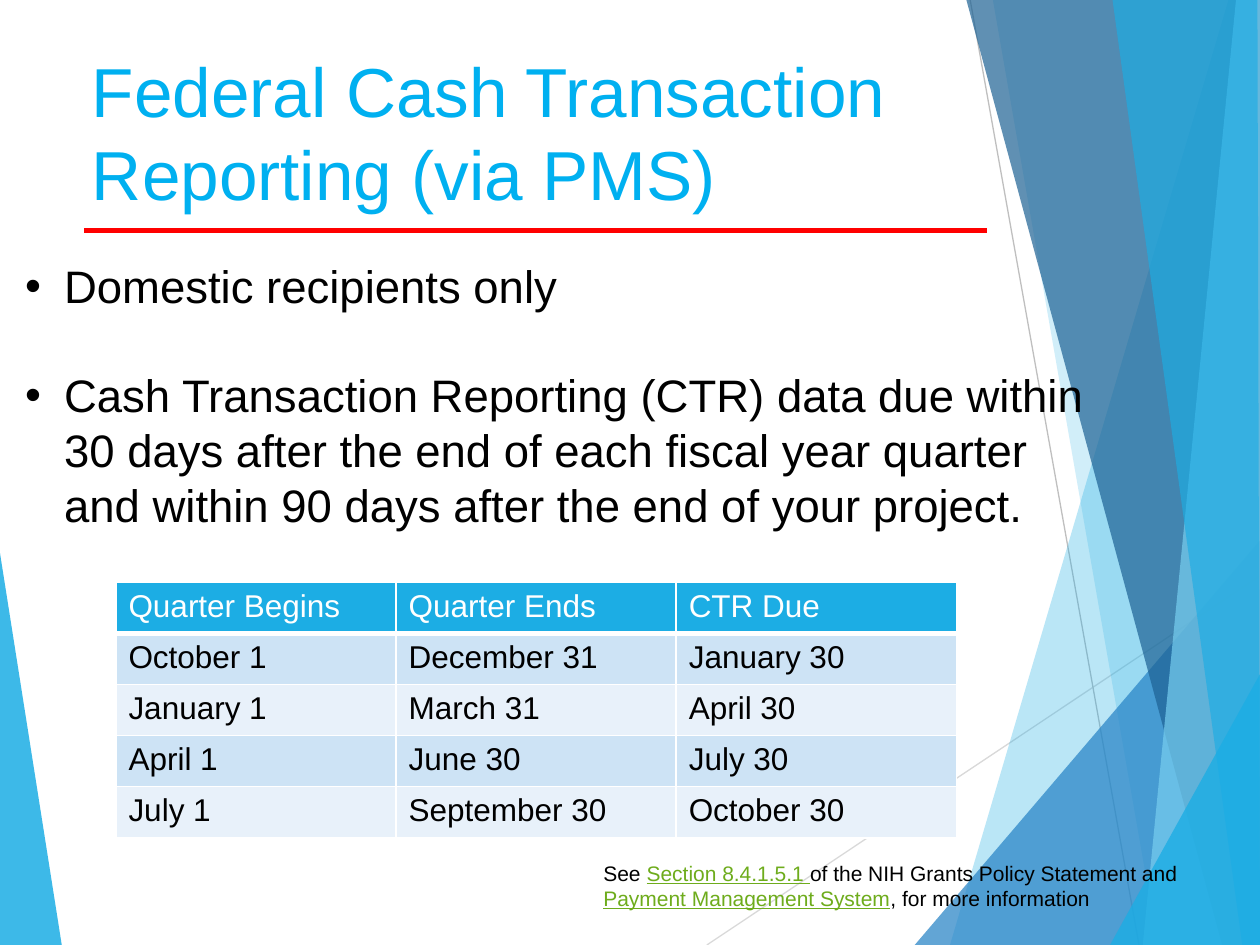
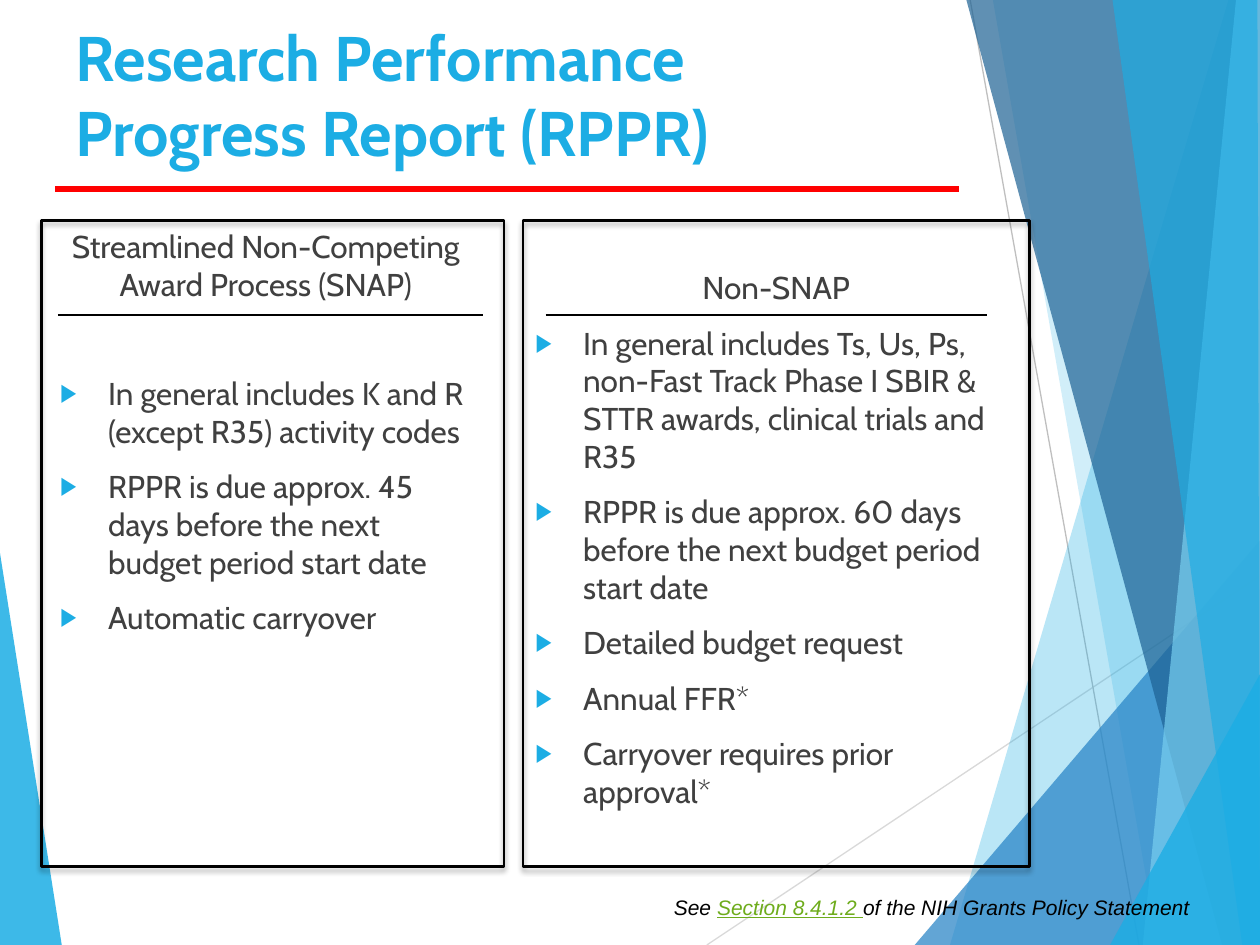
import pptx
import pptx.dml.color
import pptx.enum.dml
import pptx.enum.shapes
import pptx.enum.text
import pptx.oxml
import pptx.oxml.ns
import pptx.util
from lxml import etree

PX = 9144  # EMU in one px, 100 px to the inch
COLOURS = {
    "accent": "1CADE4", "bright": "00B0F0", "blue": "2683C6", "navy": "1D6294",
    "sky": "77CEEF", "rule": "FF0000", "link": "6EAC1C", "text": "000000",
    "body": "404040", "white": "FFFFFF", "band": "CDE3F5", "pale": "E8F1FA",
    "grey": "BFBFBF", "light grey": "D9D9D9",
}
ALIGN = pptx.enum.text.PP_ALIGN
ANCHOR = pptx.enum.text.MSO_ANCHOR
LEADING = 1.2  # line pitch of Arial text, as a share of its size

# Facets behind every slide: colour, opacity in percent, corners
LEFT_FACET = ("accent", 85, [(0, 439), (49, 750), (0, 750)])
RIGHT_FACETS = [
    ("accent", 30, [(975, 0), (754, 750), (1000, 750), (1000, 0)]),
    ("accent", 20, [(788, 0), (919, 750), (1000, 750), (1000, 0)]),
    ("blue", 72, [(726, 750), (1000, 429), (1000, 750)]),
    ("navy", 70, [(767, 0), (970, 750), (1000, 750), (1000, 0)]),
    ("sky", 70, [(981, 0), (907, 750), (1000, 750), (1000, 0)]),
    ("accent", 65, [(883, 0), (986, 750), (1000, 750), (998, 0)]),
    ("accent", 80, [(881, 750), (1000, 535), (1000, 750)]),
]


def px(*lengths):
    return [pptx.util.Emu(round(length * PX)) for length in lengths]


def rgb(colour):
    return pptx.dml.color.RGBColor.from_string(COLOURS[colour])


def apply(target, values):
    for attribute, value in values.items():
        setattr(target, attribute, value)


def add_xml(parent, tag, **attributes):
    return etree.SubElement(parent, pptx.oxml.ns.qn(tag),
                            {key: str(value) for key, value in attributes.items()})


class Deck:
    def __init__(self):
        self.presentation = pptx.Presentation()
        apply(self.presentation, dict(zip(("slide_width", "slide_height"), px(1000, 750))))
        self.slide = None

    def new_slide(self):
        layout = self.presentation.slide_layouts[5]
        self.slide = self.presentation.slides.add_slide(layout)
        self.facet(*LEFT_FACET)
        self.line((561, 750), (1000, 457), "light grey", 0.75)
        self.line((770, 0), (904, 750), "grey", 0.75)
        for facet in RIGHT_FACETS:
            self.facet(*facet)

    def facet(self, colour, opacity, corners):
        outline = self.slide.shapes.build_freeform(*corners[0], scale=float(PX))
        outline.add_line_segments(corners[1:], close=True)
        facet = outline.convert_to_shape()
        facet.shadow.inherit = False
        facet.fill.solid()
        facet.fill.fore_color.rgb = rgb(colour)
        facet.line.fill.background()
        fill = facet.fill._xPr.find(pptx.oxml.ns.qn("a:solidFill"))
        add_xml(fill[0], "a:alpha", val=opacity * 1000)

    def line(self, start, end, colour, width):
        line = self.slide.shapes.add_connector(
            pptx.enum.shapes.MSO_CONNECTOR.STRAIGHT, *px(*start, *end))
        line.line.color.rgb = rgb(colour)
        line.line.width = pptx.util.Pt(width)
        add_xml(line._element.spPr, "a:effectLst")

    def font(self, font, colour, size, **values):
        apply(font, {"size": pptx.util.Pt(size), **values})
        font.color.rgb = rgb(colour)

    def title(self, text, box, rule_start, rule_end, colour, size, leading=None, **font):
        title = self.slide.shapes.title
        apply(title, dict(zip(("left", "top", "width", "height"), px(*box))))
        frame = title.text_frame
        frame.text = text
        apply(frame, {"word_wrap": True, "vertical_anchor": ANCHOR.MIDDLE,
                      "auto_size": pptx.enum.text.MSO_AUTO_SIZE.NONE})
        heading = frame.paragraphs[0]
        heading.alignment = ALIGN.LEFT
        if leading:
            heading.line_spacing = pptx.util.Pt(size * leading)
        self.font(heading.runs[0].font, colour, size, **font)
        self.line(rule_start, rule_end, "rule", 3)

    def text_frame(self, box):
        frame = self.slide.shapes.add_textbox(*px(*box)).text_frame
        frame.word_wrap = True
        return frame

    def bullet(self, paragraph, mark, indent, colour=None, percent=100):
        properties = paragraph._p.get_or_add_pPr()
        margin = px(indent)[0]
        properties.set("marL", str(margin))
        properties.set("indent", str(-margin))
        if colour:
            add_xml(add_xml(properties, "a:buClr"), "a:srgbClr", val=COLOURS[colour])
        add_xml(properties, "a:buSzPct", val=percent * 1000)
        add_xml(properties, "a:buFont", typeface="Arial")
        add_xml(properties, "a:buChar", char=mark)

    def points(self, box, points):
        size = 26
        pitch = pptx.util.Pt(size * LEADING)
        frame = self.text_frame(box)
        for index, point in enumerate(points):
            paragraph = frame.paragraphs[0] if index == 0 else frame.add_paragraph()
            paragraph.line_spacing = pitch
            if index:
                paragraph.space_before = pitch
            self.bullet(paragraph, "•", 31)
            run = paragraph.add_run()
            run.text = point
            self.font(run.font, "text", size, name="Arial")

    def award_column(self, box, heading, points, gap=10):
        frame = self.text_frame(box)
        for index, text in enumerate([heading, *points]):
            paragraph = frame.paragraphs[0] if index == 0 else frame.add_paragraph()
            if index:
                paragraph.space_before = pptx.util.Pt(gap if index == 1 else 10)
                self.bullet(paragraph, "▶", 38, "accent", 80)
            else:
                paragraph.alignment = ALIGN.CENTER
            run = paragraph.add_run()
            run.text = text
            self.font(run.font, "body", 18, name="Cabin")

    def reference(self, box, parts, **font):
        """Write the parts in turn; every second one looks like a link."""
        paragraph = self.text_frame(box).paragraphs[0]
        paragraph.line_spacing = pptx.util.Pt(12 * LEADING)
        for index, part in enumerate(parts):
            linked = index % 2 == 1
            run = paragraph.add_run()
            run.text = part
            self.font(run.font, "link" if linked else "text", 12,
                      name="Arial", underline=linked, **font)

    def frame(self, box):
        frame = self.slide.shapes.add_shape(
            pptx.enum.shapes.MSO_SHAPE.RECTANGLE, *px(*box))
        frame.fill.background()
        frame.line.color.rgb = rgb("text")
        frame.line.width = pptx.util.Pt(1.5)
        frame.shadow.inherit = False
        effects = frame._element.spPr.find(pptx.oxml.ns.qn("a:effectLst"))
        shadow = add_xml(effects, "a:outerShdw", blurRad=pptx.util.Pt(3),
                         dist=pptx.util.Pt(2), dir=90 * 60000, rotWithShape=0)
        shade = add_xml(shadow, "a:srgbClr", val=COLOURS["text"])
        add_xml(shade, "a:alpha", val=35000)

    def table(self, box, rows):
        table = self.slide.shapes.add_table(len(rows), len(rows[0]), *px(*box)).table
        for row, texts in enumerate(rows):
            fill = "accent" if row == 0 else ("pale", "band")[row % 2]
            for column, text in enumerate(texts):
                cell = table.cell(row, column)
                self.borders(cell, top=3 if row == 1 else 1, bottom=3 if row == 0 else 1)
                cell.fill.solid()
                cell.fill.fore_color.rgb = rgb(fill)
                cell.text = text
                self.font(cell.text_frame.paragraphs[0].runs[0].font,
                          "text" if row else "white", 18, name="Arial", bold=False)

    def borders(self, cell, top, bottom):
        properties = cell._tc.get_or_add_tcPr()
        for side, width in {"L": 1, "R": 1, "T": top, "B": bottom}.items():
            border = add_xml(properties, f"a:ln{side}", w=pptx.util.Pt(width))
            add_xml(add_xml(border, "a:solidFill"), "a:srgbClr", val=COLOURS["white"])


def cash_reporting(deck):
    deck.new_slide()
    deck.points((10, 200, 865, 337), [
        "Domestic recipients only",
        "Cash Transaction Reporting (CTR) data due within 30 days after the end of each "
        "fiscal year quarter and within 90 days after the end of your project.",
    ])
    deck.reference((469, 678, 531, 50), [
        "See ", "Section 8.4.1.5.1 ", "of the NIH Grants Policy Statement and ",
        "Payment Management System", ", for more information",
    ])
    deck.table((92, 462, 667, 203), [
        ("Quarter Begins", "Quarter Ends", "CTR Due"),
        ("October 1", "December 31", "January 30"),
        ("January 1", "March 31", "April 30"),
        ("April 1", "June 30", "July 30"),
        ("July 1", "September 30", "October 30"),
    ])
    deck.title("Federal Cash Transaction Reporting (via PMS)", (63, 32, 694, 144),
               (67, 183), (783, 183), "bright", 39.6, LEADING, name="Arial")


def progress_report(deck):
    deck.new_slide()
    # Award types side by side
    deck.award_column((38, 175, 346, 495), "Streamlined Non-Competing Award Process (SNAP)", [
        "In general includes K and R (except R35) activity codes",
        "RPPR is due approx. 45 days before the next budget period start date",
        "Automatic carryover",
    ], gap=41)
    deck.award_column((415, 208, 402, 458), "Non-SNAP", [
        "In general includes Ts, Us, Ps, non-Fast Track Phase I SBIR & STTR awards, "
        "clinical trials and R35",
        "RPPR is due approx. 60 days before the next budget period start date",
        "Detailed budget request",
        "Annual FFR*",
        "Carryover requires prior approval*",
    ])
    # Heading rules and frames
    for left, right in ((46, 383), (433, 783)):
        deck.line((left, 250), (right, 250), "text", 1.5)
    for left, width in ((33, 367), (415, 402)):
        deck.frame((left, 175, width, 513))
    deck.reference((525, 705, 436, 30), [
        "See ", "Section 8.4.1.2 ", "of the NIH Grants Policy Statement",
    ], italic=True)
    deck.title("Research Performance Progress Report (RPPR)", (50, 8, 575, 133),
               (44, 150), (761, 150), "accent", 36, name="Cabin", bold=True)


def main():
    deck = Deck()
    cash_reporting(deck)
    progress_report(deck)
    deck.presentation.save("out.pptx")


if __name__ == "__main__":
    main()
